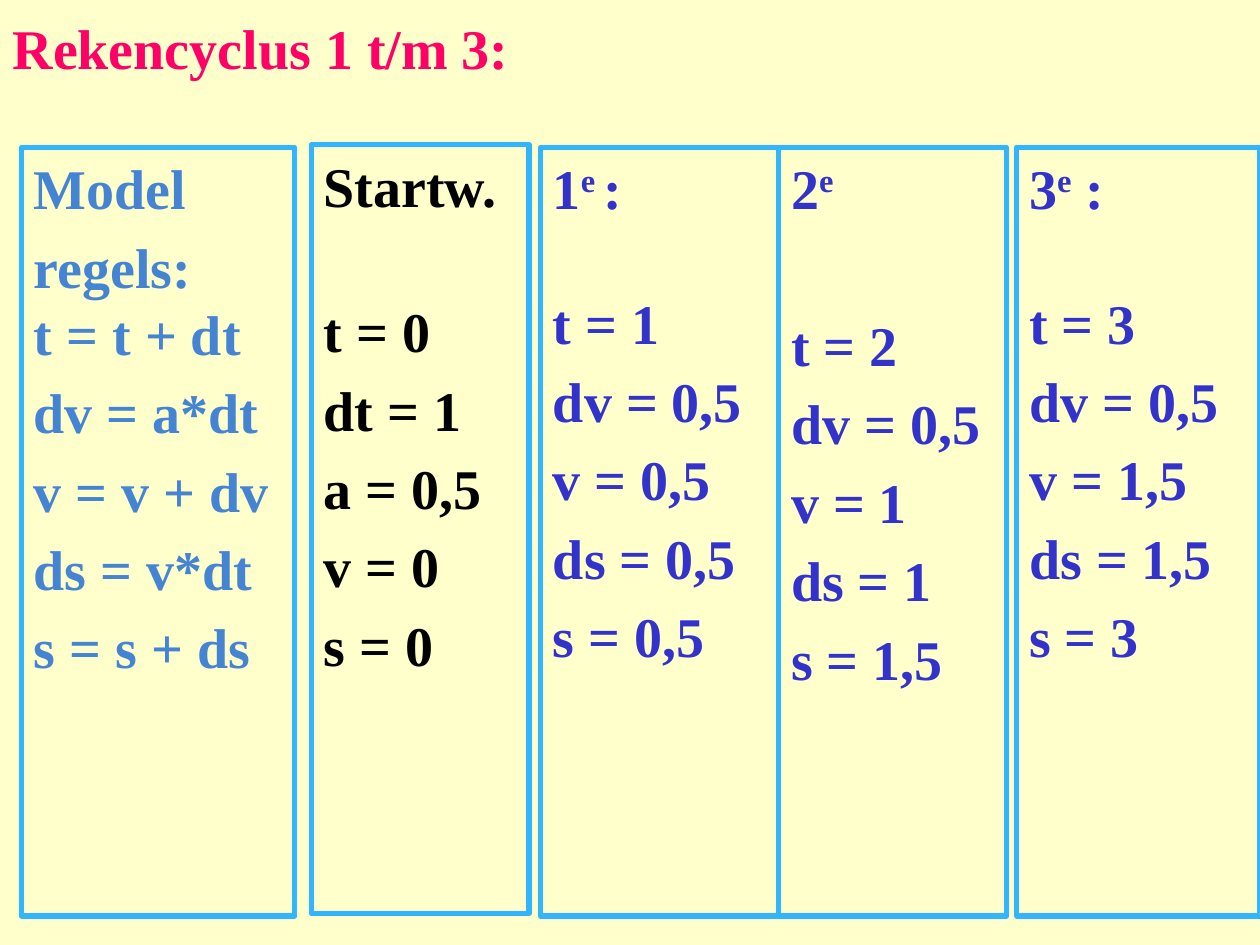
from pptx import Presentation, util as u
from pptx.dml.color import RGBColor
from pptx.enum import shapes, text

COLORS = {"bg": "FFFFCC", "title": "FF0066", "border": "31B6FD",
          "rules": "4584D3", "start": "000000", "cycle": "3333CC"}
FONT = {"name": "Times New Roman", "size": u.Pt(32), "bold": True}
LINE, GAP = 38.4, 6.4


class Deck:
    """Holds the style and the current slide, and draws its elements."""

    def __init__(self):
        self.prs = Presentation()
        self.prs.slide_width, self.prs.slide_height = u.Inches(10), u.Inches(7.5)
        self.s = self.prs.slides.add_slide(self.prs.slide_layouts[5])
        self.fill(self.s.background.fill, "bg")

    def fill(self, fill, color):
        fill.solid()
        fill.fore_color.rgb = RGBColor.from_string(COLORS[color])

    def run(self, p, words, color, raised=False):
        r = p.add_run()
        r.text = words
        for key, value in FONT.items():
            setattr(r.font, key, value)
        self.fill(r.font.fill, color)
        if raised:
            r.font._element.set("baseline", "30000")

    def frame(self, tf, anchor):
        values = {"word_wrap": True, "auto_size": text.MSO_AUTO_SIZE.NONE,
                  "vertical_anchor": anchor,
                  "margin_left": u.Inches(0.1), "margin_right": u.Inches(0.1),
                  "margin_top": u.Inches(0.05), "margin_bottom": u.Inches(0.05)}
        for key, value in values.items():
            setattr(tf, key, value)

    def title(self, words):
        sp = self.s.shapes.title
        box = {"left": 0, "top": 0, "width": 10, "height": 0.75}
        for key, value in box.items():
            setattr(sp, key, u.Inches(value))
        self.frame(sp.text_frame, text.MSO_ANCHOR.MIDDLE)
        p = sp.text_frame.paragraphs[0]
        p.alignment = text.PP_ALIGN.LEFT
        self.run(p, words, "title")

    def column(self, left, width, color, head, body, gap, top=1.17):
        sp = self.s.shapes.add_shape(shapes.MSO_SHAPE.RECTANGLE, u.Inches(left),
                                     u.Inches(top), u.Inches(width), u.Inches(6.1))
        sp.shadow.inherit = False
        sp.fill.background()
        self.fill(sp.line.fill, "border")
        sp.line.width = u.Pt(3)
        tf = sp.text_frame
        self.frame(tf, text.MSO_ANCHOR.TOP)
        rows = [(runs, GAP) for runs in head]
        rows += [([line], GAP if i else gap) for i, line in enumerate(body)]
        for i, (runs, before) in enumerate(rows):
            p = tf.add_paragraph() if i else tf.paragraphs[0]
            p.alignment = text.PP_ALIGN.LEFT
            p.space_before = u.Pt(before)
            for j, words in enumerate(runs):
                self.run(p, words, color, raised=j == 1)

    def cycle(self, left, width, head, values, gap=LINE):
        names = ("t", "dv", "v", "ds", "s")
        body = [f"{name} = {value}" for name, value in zip(names, values)]
        self.column(left, width, "cycle", [head], body, gap)


def main():
    deck = Deck()
    deck.title("Rekencyclus 1 t/m 3:")
    deck.column(0.17, 2.17, "rules", [["Model"], ["regels:"]],
                ["t = t + dt", "dv = a*dt", "v = v + dv", "ds = v*dt", "s = s + ds"], 0)
    deck.cycle(6.18, 1.81, ["2", "e"], ["2", "0,5", "1", "1", "1,5"], LINE + 2 * GAP)
    deck.cycle(8.07, 1.93, ["3", "e", " :"], ["3", "0,5", "1,5", "1,5", "3"])
    deck.cycle(4.29, 1.89, ["1", "e ", ":"], ["1", "0,5", "0,5", "0,5", "0,5"])
    deck.column(2.47, 1.73, "start", [["Startw."]],
                ["t = 0", "dt = 1", "a = 0,5", "v = 0", "s = 0"], LINE + GAP, 1.15)
    deck.prs.save("out.pptx")


if __name__ == "__main__":
    main()
